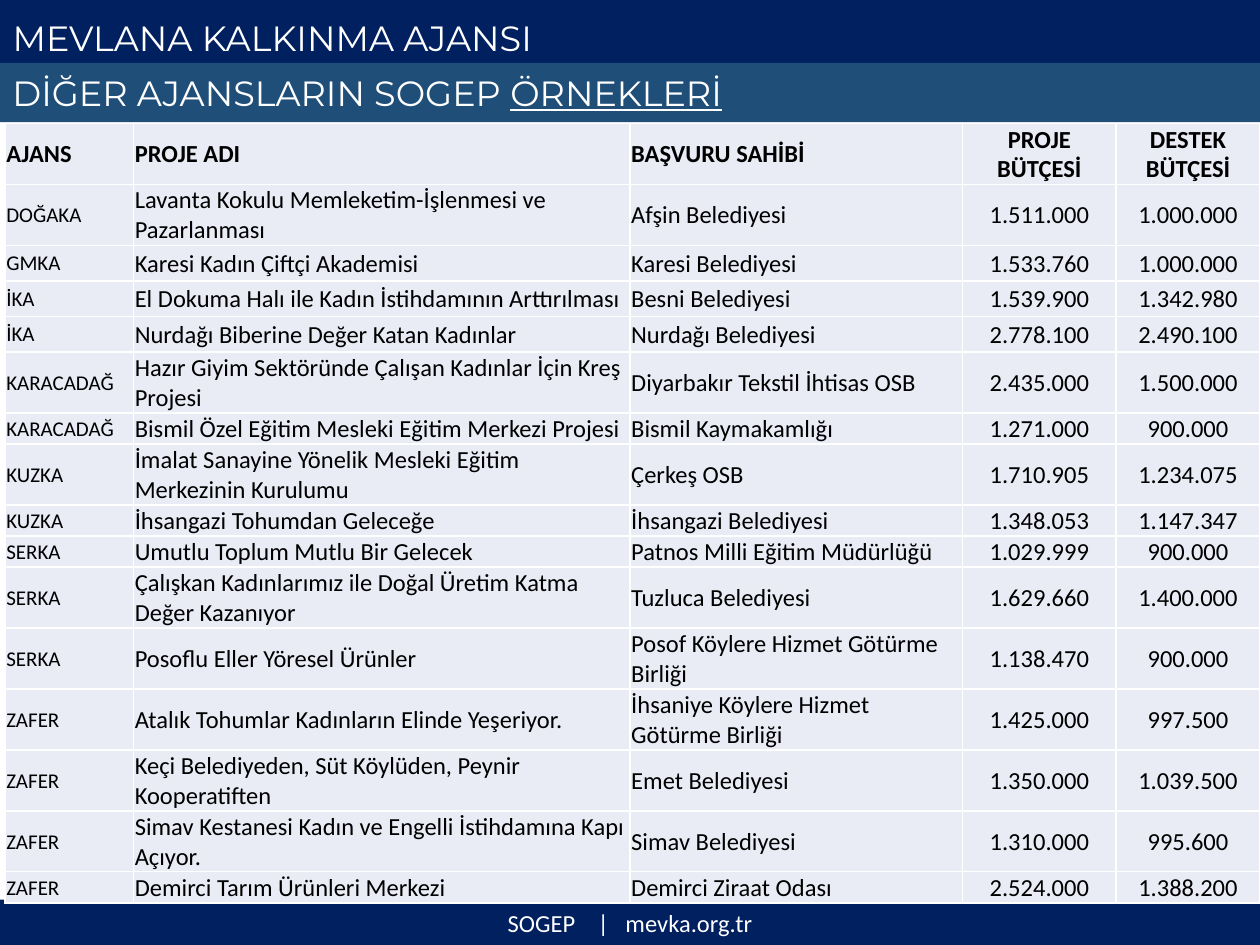
from dataclasses import dataclass

from lxml.etree import SubElement as Sub
from pptx import Presentation
from pptx.dml.color import RGBColor as Rgb
from pptx.enum.shapes import MSO_SHAPE as Form
from pptx.enum.text import MSO_ANCHOR as Anchor, PP_ALIGN as Align
from pptx.oxml.ns import qn
from pptx.util import Inches, Pt


@dataclass(frozen=True)
class Theme:
    navy: str = "002060"
    blue: str = "1F4E79"
    pale: str = "E9EBF5"
    white: str = "FFFFFF"
    black: str = "000000"
    head: str = "Montserrat"
    body: str = "Calibri"
    large: int = 20
    text: int = 14
    small: int = 12


LOOK = Theme()
WIDE, HIGH = 10, 7.5
COLS = (1.02, 3.94, 2.64, 1.22, 1.14)
LOOSE = 1.17
ROWS = (
    (2, "AJANS", "PROJE ADI", "BAŞVURU SAHİBİ", "PROJE BÜTÇESİ", "DESTEK BÜTÇESİ"),
    (2, "DOĞAKA", "Lavanta Kokulu Memleketim-İşlenmesi ve Pazarlanması",
     "Afşin Belediyesi", "1.511.000", "1.000.000"),
    (LOOSE, "GMKA", "Karesi Kadın Çiftçi Akademisi",
     "Karesi Belediyesi", "1.533.760", "1.000.000"),
    (LOOSE, "İKA", "El Dokuma Halı ile Kadın İstihdamının Arttırılması",
     "Besni Belediyesi", "1.539.900", "1.342.980"),
    (LOOSE, "İKA", "Nurdağı Biberine Değer Katan Kadınlar",
     "Nurdağı Belediyesi", "2.778.100", "2.490.100"),
    (2, "KARACADAĞ", "Hazır Giyim Sektöründe Çalışan Kadınlar İçin Kreş Projesi",
     "Diyarbakır Tekstil İhtisas OSB", "2.435.000", "1.500.000"),
    (1, "KARACADAĞ", "Bismil Özel Eğitim Mesleki Eğitim Merkezi Projesi",
     "Bismil Kaymakamlığı", "1.271.000", "900.000"),
    (2, "KUZKA", "İmalat Sanayine Yönelik Mesleki Eğitim Merkezinin Kurulumu",
     "Çerkeş OSB", "1.710.905", "1.234.075"),
    (1, "KUZKA", "İhsangazi Tohumdan Geleceğe",
     "İhsangazi Belediyesi", "1.348.053", "1.147.347"),
    (1, "SERKA", "Umutlu Toplum Mutlu Bir Gelecek",
     "Patnos Milli Eğitim Müdürlüğü", "1.029.999", "900.000"),
    (2, "SERKA", "Çalışkan Kadınlarımız ile Doğal Üretim Katma Değer Kazanıyor",
     "Tuzluca Belediyesi", "1.629.660", "1.400.000"),
    (2, "SERKA", "Posoflu Eller Yöresel Ürünler",
     "Posof Köylere Hizmet Götürme Birliği", "1.138.470", "900.000"),
    (2, "ZAFER", "Atalık Tohumlar Kadınların Elinde Yeşeriyor.",
     "İhsaniye Köylere Hizmet Götürme Birliği", "1.425.000", "997.500"),
    (2, "ZAFER", "Keçi Belediyeden, Süt Köylüden, Peynir Kooperatiften",
     "Emet Belediyesi", "1.350.000", "1.039.500"),
    (2, "ZAFER", "Simav Kestanesi Kadın ve Engelli İstihdamına Kapı Açıyor.",
     "Simav Belediyesi", "1.310.000", "995.600"),
    (1, "ZAFER", "Demirci Tarım Ürünleri Merkezi",
     "Demirci Ziraat Odası", "2.524.000", "1.388.200"),
)


def paint(part, tint):
    part.fill.solid()
    part.fill.fore_color.rgb = Rgb.from_string(tint)


def style(para, face, size, tint, bold=False):
    for run in para.runs:
        font = run.font
        font.name, font.size, font.bold = face, Pt(size), bold
        font.color.rgb = Rgb.from_string(tint)


def title(slide, box):
    shape = slide.shapes.title
    shape.left, shape.top, shape.width, shape.height = map(Inches, box)
    paint(shape, LOOK.navy)
    frame = shape.text_frame
    frame.text = "MEVLANA KALKINMA AJANSI"
    frame.vertical_anchor = Anchor.BOTTOM
    para = frame.paragraphs[0]
    para.alignment, para.line_spacing = Align.LEFT, 0.9
    style(para, LOOK.head, LOOK.large, LOOK.white)


def band(slide, box, tint, words, align):
    shape = slide.shapes.add_shape(Form.RECTANGLE, *map(Inches, box))
    shape.shadow.inherit = False
    paint(shape, tint)
    shape.line.fill.background()
    shape.text_frame.vertical_anchor = Anchor.MIDDLE
    para = shape.text_frame.paragraphs[0]
    para.alignment = align
    for word in words:
        para.add_run().text = word
    return para


def topic(slide, box):
    para = band(slide, box, LOOK.blue,
                ("DİĞER AJANSLARIN SOGEP ", "ÖRNEKLERİ"), Align.LEFT)
    style(para, LOOK.head, LOOK.large, LOOK.white)
    para.runs[-1].font.underline = True


def footer(slide, box):
    para = band(slide, box, LOOK.navy,
                ("SOGEP", " ", "|", " ", "mevka.org.tr"), Align.CENTER)
    style(para, LOOK.body, LOOK.text, LOOK.white)
    for spot, gap in ((1, 950), (3, 630)):
        para.runs[spot].font._element.set("spc", str(gap))


def edge(cell):
    props = cell._tc.get_or_add_tcPr()
    for side in ("a:lnL", "a:lnR", "a:lnT", "a:lnB"):
        line = Sub(props, qn(side), w=str(Pt(1)))
        fill = Sub(line, qn("a:solidFill"))
        Sub(fill, qn("a:srgbClr"), val=LOOK.white)


def fill_cell(cell, text, row, col):
    edge(cell)
    paint(cell, LOOK.pale)
    cell.margin_left = cell.margin_right = cell.margin_top = Inches(0.01)
    cell.margin_bottom = 0
    cell.vertical_anchor = Anchor.MIDDLE
    cell.text = text
    para = cell.text_frame.paragraphs[0]
    para.alignment = Align.CENTER if col > 2 else Align.LEFT
    size = LOOK.small if row and not col else LOOK.text
    style(para, LOOK.body, size, LOOK.black, row == 0)


def grid(slide, box):
    wide, high = box[2:]
    table = slide.shapes.add_table(len(ROWS), len(COLS), *map(Inches, box)).table
    table.horz_banding = False
    for col, part in zip(table.columns, COLS):
        col.width = Inches(wide * part / sum(COLS))
    total = sum(row[0] for row in ROWS)
    for i, (lines, *texts) in enumerate(ROWS):
        table.rows[i].height = Inches(high * lines / total)
        for j, text in enumerate(texts):
            fill_cell(table.cell(i, j), text, i, j)


def main():
    deck = Presentation()
    deck.slide_width, deck.slide_height = Inches(WIDE), Inches(HIGH)
    slide = deck.slides.add_slide(deck.slide_layouts[5])
    foot = 0.36
    base = HIGH - foot
    footer(slide, (0, base, WIDE, foot))
    title(slide, (0, 0, WIDE, 0.52))
    topic(slide, (0, 0.5, WIDE, 0.47))
    grid(slide, (0.04, 0.98, WIDE - 0.04, base - 0.98))
    deck.save("out.pptx")


if __name__ == "__main__":
    main()
